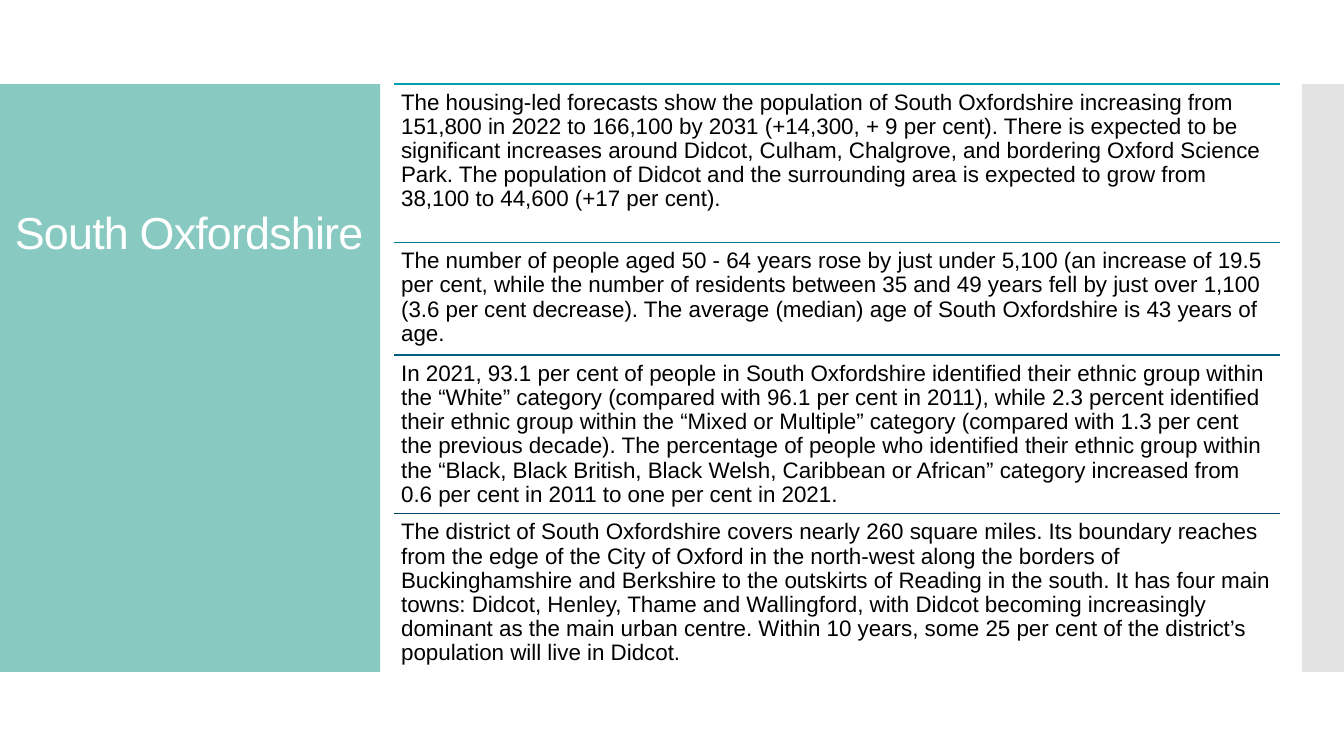
"""Build the South Oxfordshire population slide."""
from dataclasses import dataclass

from lxml import etree
from pptx import Presentation
from pptx.dml.color import RGBColor
from pptx.enum.shapes import MSO_CONNECTOR, MSO_SHAPE
from pptx.enum.text import MSO_ANCHOR, PP_ALIGN
from pptx.oxml.ns import qn
from pptx.util import Pt

RECTANGLE = MSO_SHAPE.RECTANGLE
STRAIGHT = MSO_CONNECTOR.STRAIGHT
TOP = MSO_ANCHOR.TOP
LEFT, CENTER = PP_ALIGN.LEFT, PP_ALIGN.CENTER

COLORS = {
    "panel": "88C9C1",
    "edge": "C8C8C8",
    "title": "FFFFFF",
    "body": "000000",
    "teal": "00A0AF",
    "sea": "007D98",
    "blue": "005E81",
    "navy": "00446A",
}
FONT = "Arial"
BAND_TOP, BAND_HEIGHT = 60, 420
ROW_LEFT, ROW_WIDTH = 281.5, 633
TALL, SHORT = 113.2, 80.4


@dataclass(frozen=True)
class Band:
    left: float
    width: float
    color: str
    opacity: int = 100


@dataclass(frozen=True)
class Row:
    height: float
    rule_color: str
    text: str


BANDS = [Band(0, 271.5, "panel"), Band(930, 30, "edge", 50)]

ROWS = [
    Row(TALL, "teal",
        "The housing-led forecasts show the population of South Oxfordshire increasing from "
        "151,800 in 2022 to 166,100 by 2031 (+14,300, + 9 per cent). There is expected to be "
        "significant increases around Didcot, Culham, Chalgrove, and bordering Oxford Science "
        "Park. The population of Didcot and the surrounding area is expected to grow from "
        "38,100 to 44,600 (+17 per cent)."),
    Row(SHORT, "sea",
        "The number of people aged 50 - 64 years rose by just under 5,100 (an increase of 19.5 "
        "per cent, while the number of residents between 35 and 49 years fell by just over 1,100 "
        "(3.6 per cent decrease). The average (median) age of South Oxfordshire is 43 years of "
        "age."),
    Row(TALL, "blue",
        "In 2021, 93.1 per cent of people in South Oxfordshire identified their ethnic group within "
        "the “White” category (compared with 96.1 per cent in 2011), while 2.3 percent identified "
        "their ethnic group within the “Mixed or Multiple” category (compared with 1.3 per cent "
        "the previous decade). The percentage of people who identified their ethnic group within "
        "the “Black, Black British, Black Welsh, Caribbean or African” category increased from "
        "0.6 per cent in 2011 to one per cent in 2021."),
    Row(TALL, "navy",
        "The district of South Oxfordshire covers nearly 260 square miles. Its boundary reaches "
        "from the edge of the City of Oxford in the north-west along the borders of "
        "Buckinghamshire and Berkshire to the outskirts of Reading in the south. It has four main "
        "towns: Didcot, Henley, Thame and Wallingford, with Didcot becoming increasingly "
        "dominant as the main urban centre. Within 10 years, some 25 per cent of the district’s "
        "population will live in Didcot."),
]


def color_of(name: str) -> RGBColor:
    """Return the named colour."""
    return RGBColor.from_string(COLORS[name])


def add_band(page, band: Band) -> None:
    """Draw a plain vertical band, see-through if its opacity is below 100."""
    shape = page.shapes.add_shape(
        RECTANGLE, Pt(band.left), Pt(BAND_TOP), Pt(band.width), Pt(BAND_HEIGHT))
    shape.shadow.inherit = False
    shape.fill.solid()
    shape.fill.fore_color.rgb = color_of(band.color)
    shape.line.fill.background()
    if band.opacity < 100:
        fill_color = shape.fill._xPr.find(qn("a:solidFill"))[0]
        etree.SubElement(fill_color, qn("a:alpha"), val=str(band.opacity * 1000))


def add_rule(page, top: float, color: str) -> None:
    """Draw the thin line above a row."""
    rule = page.shapes.add_connector(
        STRAIGHT, Pt(ROW_LEFT), Pt(top), Pt(ROW_LEFT + ROW_WIDTH), Pt(top))
    rule.line.color.rgb = color_of(color)
    rule.line.width = Pt(0.85)
    etree.SubElement(rule._element.spPr, qn("a:effectLst"))


def add_text(page, text: str, *, left: float, top: float, width: float, height: float,
             size: float, color: str, align=LEFT, inset_x: float = 5,
             inset_y: float = 5, tracking: float = 0) -> None:
    """Write one wrapped paragraph in a text box."""
    box = page.shapes.add_textbox(Pt(left), Pt(top), Pt(width), Pt(height))
    frame = box.text_frame
    frame.word_wrap = True
    frame.vertical_anchor = TOP
    frame.margin_left = frame.margin_right = Pt(inset_x)
    frame.margin_top = frame.margin_bottom = Pt(inset_y)
    para = frame.paragraphs[0]
    para.alignment = align
    para.line_spacing = 0.9
    span = para.add_run()
    span.text = text
    span.font.name = FONT
    span.font.size = Pt(size)
    span.font.color.rgb = color_of(color)
    if tracking:
        span.font._element.set("spc", str(round(tracking * 100)))


def main() -> None:
    """Build and save the deck."""
    deck = Presentation()
    deck.slide_width, deck.slide_height = Pt(960), Pt(540)
    page = deck.slides.add_slide(deck.slide_layouts[6])
    for band in BANDS:
        add_band(page, band)
    top = BAND_TOP
    for row in ROWS:
        add_rule(page, top, row.rule_color)
        add_text(page, row.text, left=ROW_LEFT, top=top, width=ROW_WIDTH,
                 height=row.height, size=16, color="body")
        top += row.height
    add_text(page, "South Oxfordshire", left=0, top=147, width=270, height=341,
             size=32, color="title", align=CENTER, inset_x=7.2, inset_y=3.6, tracking=-0.6)
    deck.save("out.pptx")


if __name__ == "__main__":
    main()
